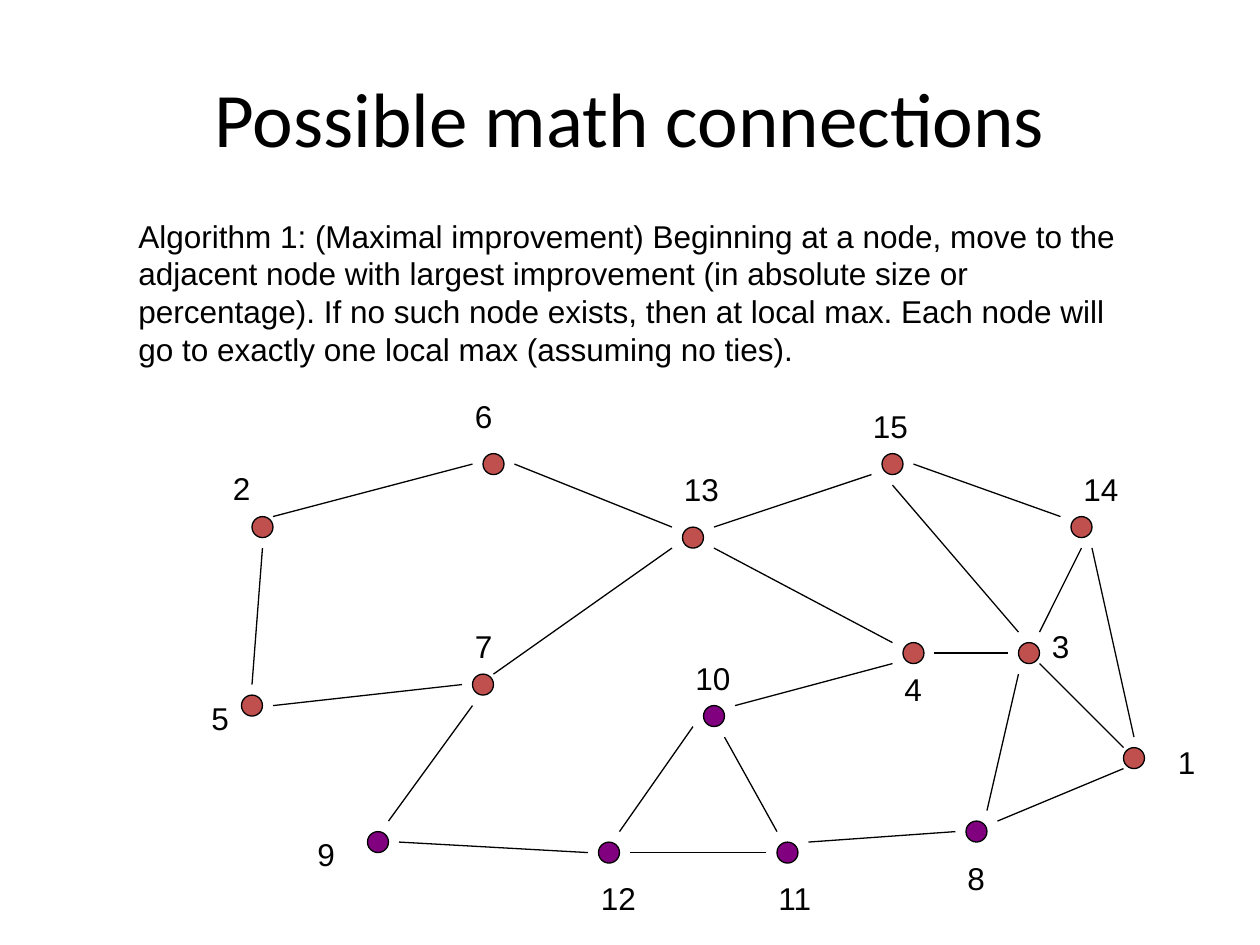
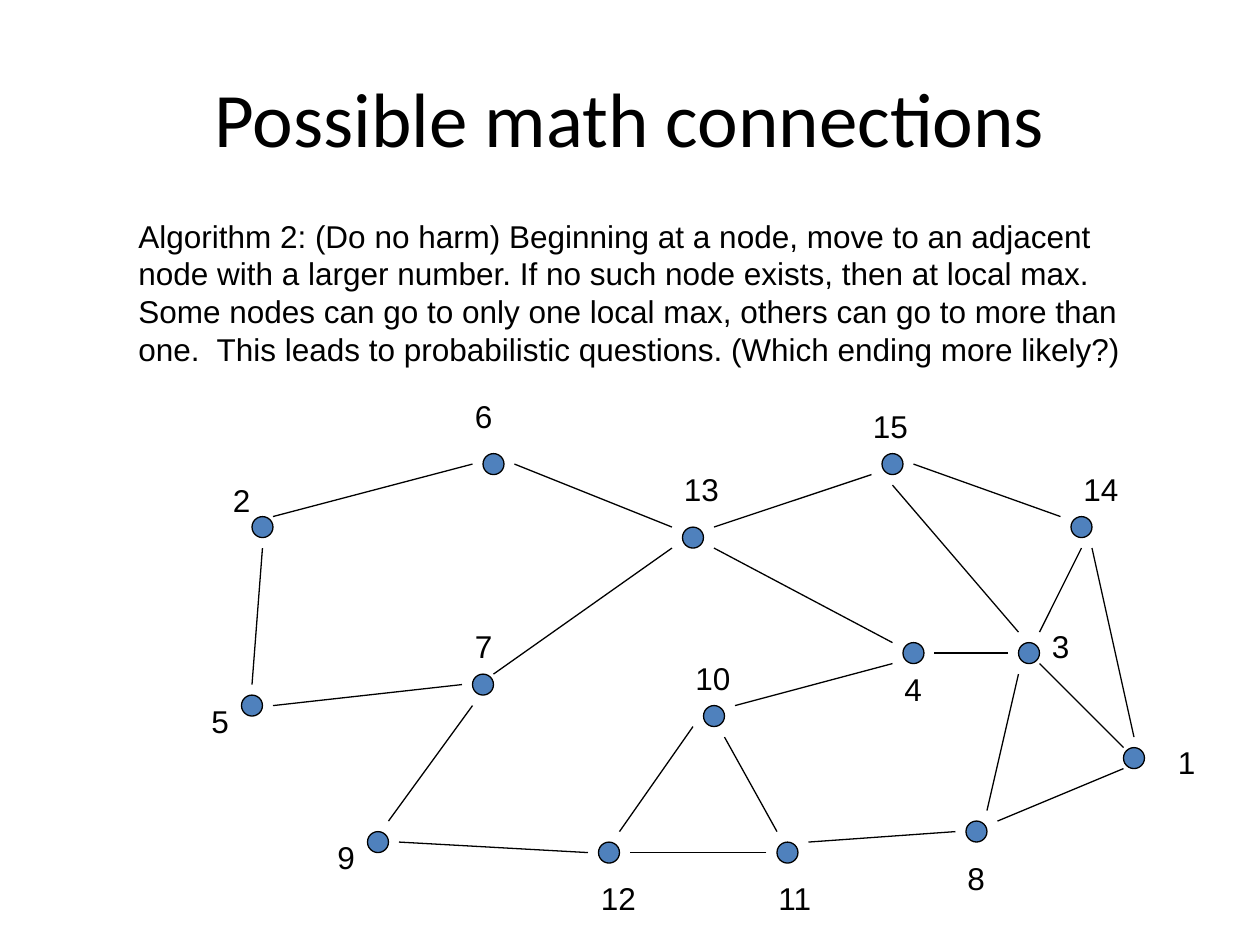
from dataclasses import dataclass, field
from typing import Any

from lxml.etree import SubElement
from pptx import Presentation
from pptx.dml.color import RGBColor
from pptx.enum.shapes import MSO_CONNECTOR as Connector, MSO_SHAPE as Shape
from pptx.enum.text import MSO_ANCHOR as Anchor, MSO_AUTO_SIZE as AutoSize, PP_ALIGN as Align
from pptx.oxml.ns import qn
from pptx.util import Inches, Length, Pt

BLACK = RGBColor(0x00, 0x00, 0x00)
WHITE = RGBColor(0xFF, 0xFF, 0xFF)
RED = RGBColor(0xC0, 0x50, 0x4D)
PURPLE = RGBColor(0x80, 0x00, 0x80)
BLUE = RGBColor(0x4F, 0x81, 0xBD)

TITLE = "Possible math connections"
TITLE_FONT = {"name": "Calibri", "size": Pt(44)}
TEXT_FONT = {"name": "Arial", "size": Pt(18)}
LINE_WIDTH = Pt(0.75)

# The graph lies on a grid of twelfths of an inch, with row 0 at GRID_TOP.
GRID_TOP = 3.6
STEPS_PER_INCH = 12
DOT_STEPS = 2

Offset = tuple[int, int]
LabelSpot = tuple[float, float]


@dataclass(frozen=True)
class Node:
    """A dot centred on a grid point, and its label box in inches."""
    column: int
    row: int
    label_left: float
    label_top: float
    label_width: float


@dataclass(frozen=True)
class Edge:
    """A line between two nodes; each end is offset in grid steps from its dot's centre."""
    start: int
    start_offset: Offset
    end: int
    end_offset: Offset


@dataclass(frozen=True)
class GraphPage:
    text: str
    dot_color: RGBColor
    purple_nodes: frozenset[int] = frozenset()
    moved_labels: dict[int, LabelSpot] = field(default_factory=dict)
    grouped: bool = False


NODES = {
    2: Node(25, 7, 1.75, 3.67, 0.5),
    6: Node(47, 1, 3.67, 3.1, 0.5),
    13: Node(66, 8, 5.33, 3.68, 0.5),
    15: Node(85, 1, 6.83, 3.18, 0.67),
    14: Node(103, 7, 8.5, 3.68, 0.5),
    1: Node(108, 29, 9.25, 5.85, 0.33),
    8: Node(93, 36, 7.58, 6.77, 0.75),
    11: Node(75, 38, 6.08, 6.93, 0.58),
    12: Node(58, 38, 4.67, 6.93, 0.5),
    10: Node(68, 25, 5.42, 5.18, 0.5),
    4: Node(87, 19, 7.08, 5.27, 0.33),
    3: Node(98, 19, 8.25, 4.93, 0.42),
    7: Node(46, 22, 3.67, 4.93, 0.42),
    9: Node(36, 37, 2.42, 6.58, 0.42),
    5: Node(24, 24, 1.58, 5.5, 0.42),
}

EDGES = [
    Edge(2, (1, -1), 6, (-2, 0)),
    Edge(6, (2, 0), 13, (-2, -1)),
    Edge(13, (2, -1), 15, (-2, 1)),
    Edge(15, (2, 0), 14, (-2, -1)),
    Edge(14, (0, 2), 3, (1, -2)),
    Edge(3, (-1, 2), 8, (1, -2)),
    Edge(15, (0, 2), 3, (-1, -2)),
    Edge(3, (-2, 0), 4, (2, 0)),
    Edge(8, (-2, 0), 11, (2, -1)),
    Edge(11, (-2, 0), 12, (2, 0)),
    Edge(12, (-2, 0), 9, (2, 0)),
    Edge(9, (1, -2), 7, (-1, 2)),
    Edge(7, (-2, 0), 5, (2, 0)),
    Edge(5, (0, -2), 2, (0, 2)),
    Edge(7, (1, -1), 13, (-2, 1)),
    Edge(13, (2, 1), 4, (-2, -1)),
    Edge(4, (-2, 1), 10, (2, -1)),
    Edge(10, (-2, 1), 12, (1, -2)),
    Edge(10, (1, 2), 11, (-1, -2)),
    Edge(14, (1, 2), 1, (0, -2)),
    Edge(1, (-1, 1), 8, (2, -1)),
    Edge(3, (1, 1), 1, (-1, -1)),
]

PAGES = [
    GraphPage(
        "Algorithm 1: (Maximal improvement) Beginning at a node, move to the adjacent node "
        "with largest improvement (in absolute size or percentage). If no such node exists, "
        "then at local max. Each node will go to exactly one local max (assuming no ties).",
        RED,
        purple_nodes=frozenset({8, 9, 10, 11, 12}),
    ),
    GraphPage(
        "Algorithm 2: (Do no harm) Beginning at a node, move to an adjacent node with a larger "
        "number. If no such node exists, then at local max. Some nodes can go to only one local "
        "max, others can go to more than one.  This leads to probabilistic questions. "
        "(Which ending more likely?)",
        BLUE,
        moved_labels={2: (1.75, 3.77), 9: (2.58, 6.6), 5: (1.58, 5.52)},
        grouped=True,
    ),
]


def grid_point(node: Node, offset: Offset) -> tuple[Length, Length]:
    """Return the slide position that lies offset steps from the node's centre."""
    return (Inches((node.column + offset[0]) / STEPS_PER_INCH),
            Inches(GRID_TOP + (node.row + offset[1]) / STEPS_PER_INCH))


def format_font(font: Any, values: dict[str, Any]) -> None:
    for name, value in values.items():
        setattr(font, name, value)
    font.color.rgb = BLACK


def format_line(line: Any) -> None:
    line.color.rgb = BLACK
    line.width = LINE_WIDTH


def add_title(page: Any) -> None:
    title = page.shapes.title
    place = {"left": 0.5, "top": 0.3, "width": 9, "height": 1.25}
    for name, value in place.items():
        setattr(title, name, Inches(value))
    title.text_frame.vertical_anchor = Anchor.MIDDLE
    para = title.text_frame.paragraphs[0]
    para.alignment = Align.CENTER
    span = para.add_run()
    span.text = TITLE
    format_font(span.font, TITLE_FONT)


def add_text(shapes: Any, text: str, left: float, top: float, width: float, height: float) -> None:
    box = shapes.add_textbox(*map(Inches, (left, top, width, height)))
    box.text_frame.word_wrap = True
    box.text_frame.auto_size = AutoSize.SHAPE_TO_FIT_TEXT
    span = box.text_frame.paragraphs[0].add_run()
    span.text = text
    format_font(span.font, TEXT_FONT)


def add_dot(shapes: Any, node: Node, color: RGBColor) -> None:
    size = Inches(DOT_STEPS / STEPS_PER_INCH)
    dot = shapes.add_shape(Shape.OVAL, *grid_point(node, (-1, -1)), size, size)
    dot.shadow.inherit = False
    dot.fill.solid()
    dot.fill.fore_color.rgb = color
    format_line(dot.line)


def add_edge(shapes: Any, edge: Edge) -> None:
    line = shapes.add_connector(
        Connector.STRAIGHT,
        *grid_point(NODES[edge.start], edge.start_offset),
        *grid_point(NODES[edge.end], edge.end_offset),
    )
    format_line(line.line)
    SubElement(line._element.spPr, qn("a:effectLst"))


def add_graph(shapes: Any, graph: GraphPage) -> None:
    for number, node in NODES.items():
        add_dot(shapes, node, PURPLE if number in graph.purple_nodes else graph.dot_color)
    for edge in EDGES:
        add_edge(shapes, edge)
    for number, node in NODES.items():
        left, top = graph.moved_labels.get(number, (node.label_left, node.label_top))
        add_text(shapes, str(number), left, top, node.label_width, 0.4)


def main() -> None:
    deck = Presentation()
    deck.slide_width, deck.slide_height = Inches(10), Inches(7.5)
    background = deck.slide_master.background.fill
    background.solid()
    background.fore_color.rgb = WHITE
    title_only = deck.slide_layouts[5]
    for graph in PAGES:
        page = deck.slides.add_slide(title_only)
        add_title(page)
        add_graph(page.shapes.add_group_shape().shapes if graph.grouped else page.shapes, graph)
        add_text(page.shapes, graph.text, 1, 1.67, 8.17, 1.3)
    deck.save("out.pptx")


if __name__ == "__main__":
    main()
